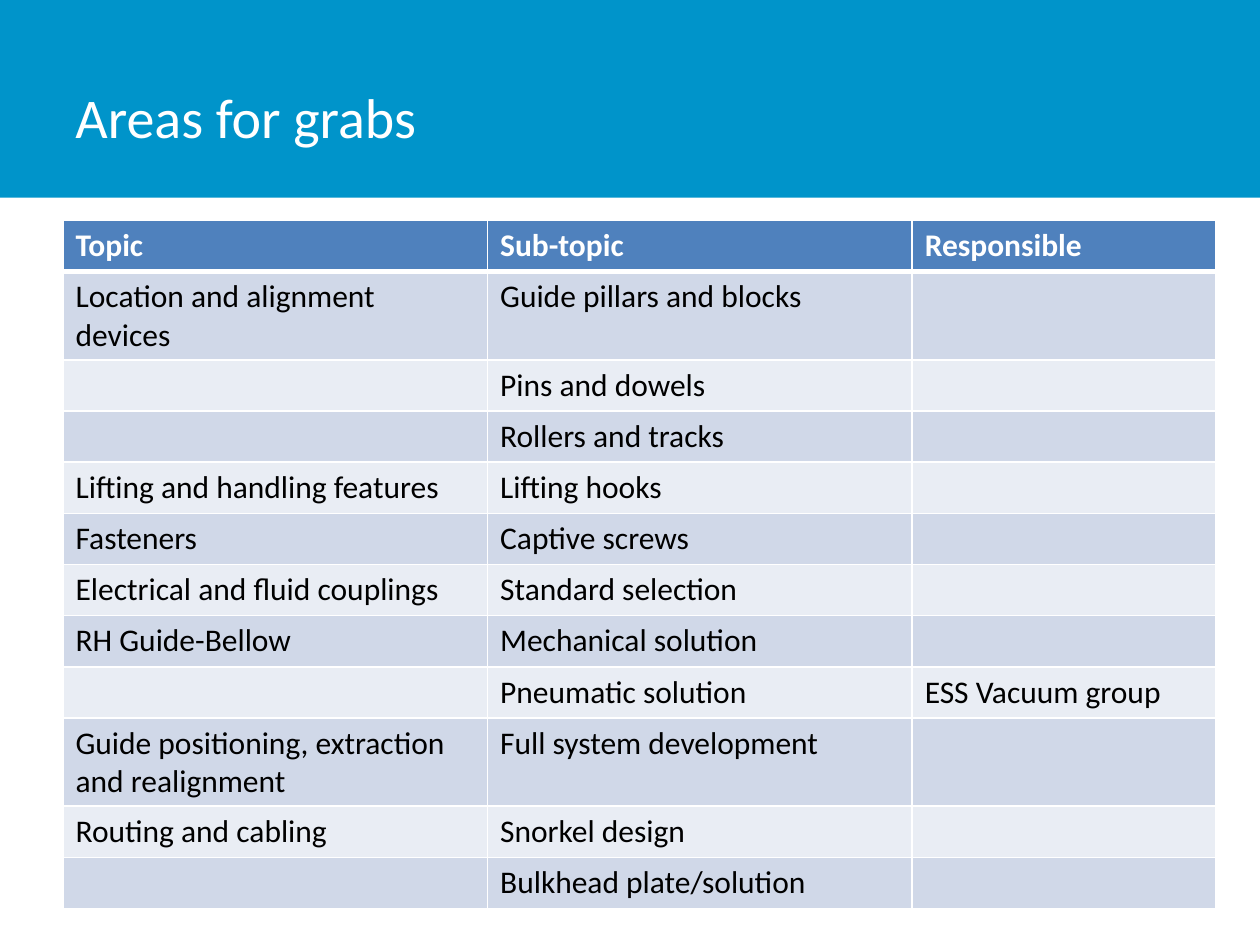
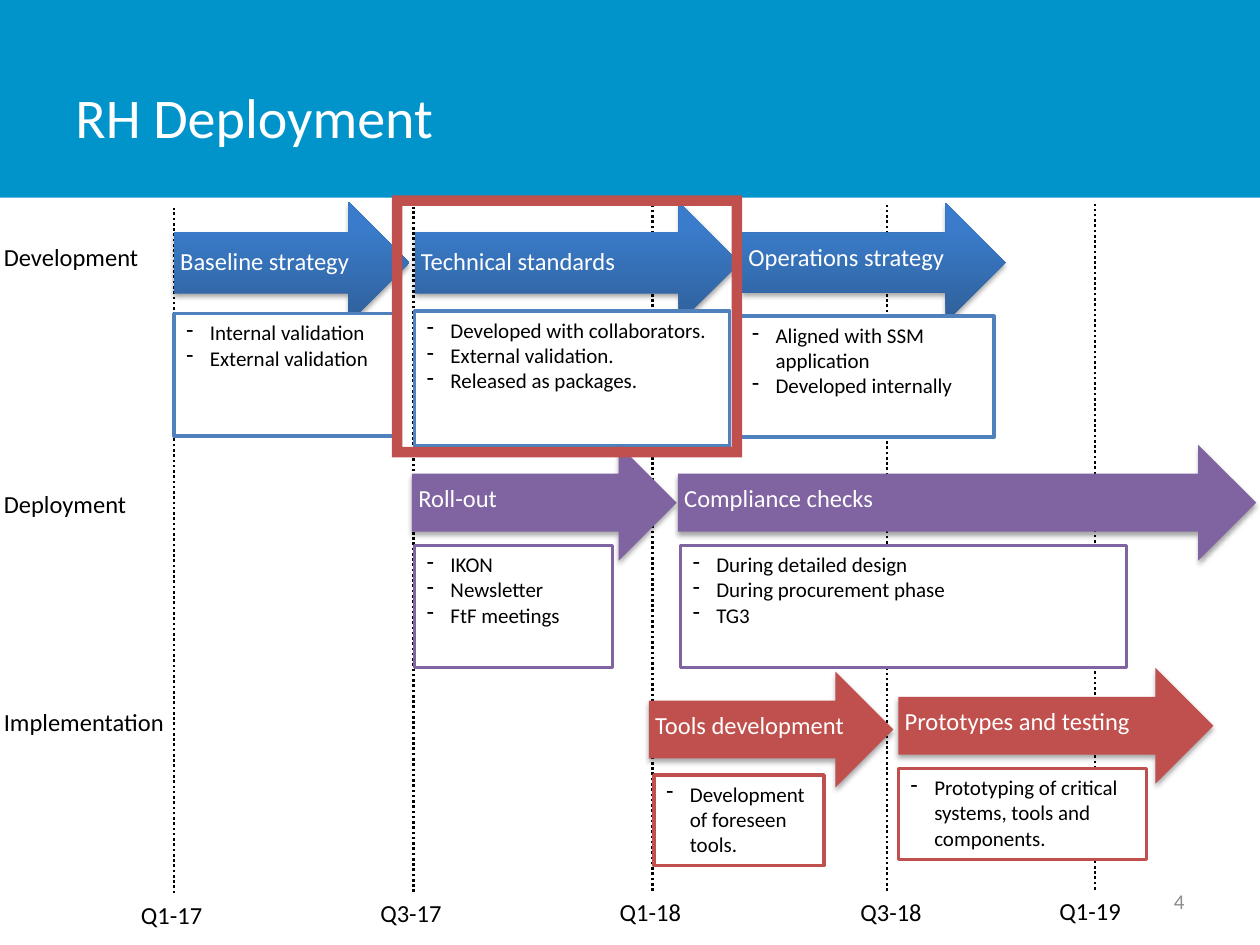
from lxml import etree
from pptx import Presentation
from pptx import util as u
from pptx.dml.color import RGBColor
from pptx.enum import dml, shapes, text
from pptx.oxml.ns import qn

COLORS = {
    "band": "0094CA", "white": "FFFFFF", "black": "000000", "number": "8C8C8C",
    "blue": "4F81BD", "purple": "8064A2", "red": "C0504D",
    "dark_row": "D0D8E8", "light_row": "E9EDF4",
    "gradient_bottom": "2F5F99", "gradient_top": "3A7CCB",
}
FONT = "Calibri"

presentation = Presentation()
presentation.slide_width = u.Inches(10)
presentation.slide_height = u.Inches(7.5)
COLUMN = presentation.slide_width / 100
ROW = presentation.slide_height / 75


def grid(left, top, width, height):
    return [round(n * unit) for n, unit in zip((left, top, width, height), (COLUMN, ROW) * 2)]


def write(frame, lines, size=14, color="black", bold=False, align="LEFT", anchor="TOP",
          bullet=None, spacing=None, margins=(1, 0.5, 1, 0.5)):
    frame.word_wrap = True
    frame.vertical_anchor = text.MSO_ANCHOR[anchor]
    frame.margin_left, frame.margin_top, frame.margin_right, frame.margin_bottom = grid(*margins)
    for index, line in enumerate(lines):
        paragraph = frame.add_paragraph() if index else frame.paragraphs[0]
        paragraph.alignment = text.PP_ALIGN[align]
        if spacing:
            paragraph.line_spacing = spacing
        if bullet:
            properties = paragraph._p.get_or_add_pPr()
            indent = round(1.87 * COLUMN)
            properties.set("marL", str(indent))
            properties.set("indent", str(-indent))
            etree.SubElement(properties, qn("a:buChar")).set("char", bullet)
        run = paragraph.add_run()
        run.text = line
        run.font.name, run.font.size, run.font.bold = FONT, u.Pt(size), bold
        run.font.color.rgb = RGBColor.from_string(COLORS[color])


slides = []
for title in ("Areas for grabs", "RH Deployment"):
    slide = presentation.slides.add_slide(presentation.slide_layouts[6])
    band = slide.shapes.add_shape(shapes.MSO_SHAPE.RECTANGLE, *grid(0, 0, 100, 15.7))
    band.shadow.inherit = False
    band.fill.solid()
    band.fill.fore_color.rgb = RGBColor.from_string(COLORS["band"])
    band.line.fill.background()
    title_box = slide.shapes.add_textbox(*grid(5, 3, 78.1, 12.5))
    write(title_box.text_frame, [title], size=32, color="white", anchor="MIDDLE")
    slides.append(slide)
areas_slide, deployment_slide = slides

areas = [
    ("Topic", "Sub-topic", "Responsible"),
    ("Location and alignment devices", "Guide pillars and blocks", ""),
    ("", "Pins and dowels", ""),
    ("", "Rollers and tracks", ""),
    ("Lifting and handling features", "Lifting hooks", ""),
    ("Fasteners", "Captive screws", ""),
    ("Electrical and fluid couplings", "Standard selection", ""),
    ("RH Guide-Bellow", "Mechanical solution", ""),
    ("", "Pneumatic solution", "ESS Vacuum group"),
    ("Guide positioning, extraction and realignment", "Full system development", ""),
    ("Routing and cabling", "Snorkel design", ""),
    ("", "Bulkhead plate/solution", ""),
]
table = areas_slide.shapes.add_table(
    len(areas), 3, *grid(5, 17.5, 91.5, 4.06 * len(areas))).table
for column, width in zip(table.columns, (33.7, 33.7, 24.1)):
    column.width = round(width * COLUMN)
for row_index, entries in enumerate(areas):
    header = row_index == 0
    fill = "blue" if header else ("light_row", "dark_row")[row_index % 2]
    for column_index, entry in enumerate(entries):
        cell = table.cell(row_index, column_index)
        properties = cell._tc.get_or_add_tcPr()
        for side in "LRTB":
            thick = (row_index, side) in ((0, "B"), (1, "T"))
            border = etree.SubElement(properties, qn("a:ln" + side))
            border.set("w", str(u.Pt(3 if thick else 1)))
            paint = etree.SubElement(border, qn("a:solidFill"))
            etree.SubElement(paint, qn("a:srgbClr")).set("val", COLORS["white"])
        cell.fill.solid()
        cell.fill.fore_color.rgb = RGBColor.from_string(COLORS[fill])
        if entry:
            write(cell.text_frame, [entry], size=18, bold=header,
                  color="white" if header else "black")

quarters = [
    ("Q1-17", 13.8, 10.2, 70.9), ("Q3-17", 32.8, 29.2, 70.8), ("Q1-18", 51.8, 48.2, 70.7),
    ("Q3-18", 70.4, 67.3, 70.7), ("Q1-19", 86.9, 83.1, 70.6),
]
for quarter, x, label_left, bottom in quarters:
    left, top, right, end = grid(x, bottom - 54.4, x, bottom)
    line = deployment_slide.shapes.add_connector(
        shapes.MSO_CONNECTOR.STRAIGHT, left, end, right, top)
    line.line.width = u.Pt(1.5)
    line.line.color.rgb = RGBColor.from_string(COLORS["black"])
    line.line.dash_style = dml.MSO_LINE.ROUND_DOT
    etree.SubElement(line._element.spPr, qn("a:effectLst"))
    label = deployment_slide.shapes.add_textbox(*grid(label_left, bottom, 6.9, 3.4))
    write(label.text_frame, [quarter])

for phase, top in (("Development", 18.7), ("Deployment", 38.3), ("Implementation", 55.6)):
    label = deployment_slide.shapes.add_textbox(*grid(0, top, 14.2, 3.4))
    write(label.text_frame, [phase], margins=(0.3, 0.5, 0, 0.5))

number_box = deployment_slide.shapes.add_textbox(*grid(71.7, 69.5, 23.3, 4))
write(number_box.text_frame, ["4"], size=12, color="number", align="RIGHT", anchor="MIDDLE")

stages = [
    ("Baseline strategy", "blue", (13.8, 16, 18.7, 9.7), (18.6, 17.2), (13.8, 24.9, 17.9, 9.7),
     ["Internal validation", "External validation"]),
    ("Technical standards", "blue", (32.9, 16, 25.8, 9.7), (18.6, 24.8), (32.9, 24.7, 25, 10.7),
     ["Developed with collaborators.", "External validation.", "Released as packages."]),
    ("Operations strategy", "blue", (58.9, 16.1, 20.9, 9.5), (18.3, 27.1), (58.7, 25.1, 20.2, 9.6),
     ["Aligned with SSM application", "Developed internally"]),
    ("Roll-out", "purple", (32.7, 35.3, 21, 9.2), (37.4, 21.9), (32.9, 43.3, 15.7, 9.7),
     ["IKON", "Newsletter", "FtF meetings"]),
    ("Compliance checks", "purple", (53.8, 35.3, 45.9, 9.2), (37.4, 40.1), (54, 43.3, 35.4, 9.7),
     ["During detailed design", "During procurement phase", "TG3"]),
    ("Prototypes and testing", "red", (71.3, 53, 25, 9.2), (55.1, 22), (71.3, 61, 19.7, 7.2),
     ["Prototyping of critical systems, tools and components."]),
    ("Tools development", "red", (51.5, 53.3, 19.4, 9.2), (55.4, 26.1), (51.9, 61.5, 13.5, 7.2),
     ["Development of foreseen tools."]),
]
for name, color, arrow_area, (name_top, name_width), details_area, details in stages:
    arrow = deployment_slide.shapes.add_shape(shapes.MSO_SHAPE.RIGHT_ARROW, *grid(*arrow_area))
    arrow.line.fill.background()
    if color == "blue":
        arrow.fill.gradient()
        arrow.fill.gradient_angle = 90
        gradient = (("gradient_bottom", 0), ("gradient_top", 0.8))
        for stop, (shade, position) in zip(arrow.fill.gradient_stops, gradient):
            stop.color.rgb = RGBColor.from_string(COLORS[shade])
            stop.position = position
    else:
        arrow.fill.solid()
        arrow.fill.fore_color.rgb = RGBColor.from_string(COLORS[color])
    arrow.shadow.inherit = False
    effects = arrow._element.spPr.find(qn("a:effectLst"))
    shadow = etree.SubElement(effects, qn("a:outerShdw"), blurRad=str(u.Pt(3.1)),
                              dist=str(u.Pt(1.8)), dir="5400000", rotWithShape="0")
    shadow_color = etree.SubElement(shadow, qn("a:srgbClr"), val=COLORS["black"])
    etree.SubElement(shadow_color, qn("a:alpha"), val="35000")

    name_box = deployment_slide.shapes.add_textbox(
        *grid(arrow_area[0], name_top, name_width, 5.8))
    write(name_box.text_frame, [name], color="white", anchor="MIDDLE", spacing=0.9,
          margins=(0.5, 0.5, 2.8, 1.8))

    details_box = deployment_slide.shapes.add_shape(
        shapes.MSO_SHAPE.RECTANGLE, *grid(*details_area))
    details_box.shadow.inherit = False
    details_box.fill.solid()
    details_box.fill.fore_color.rgb = RGBColor.from_string(COLORS["white"])
    details_box.line.color.rgb = RGBColor.from_string(COLORS[color])
    details_box.line.width = u.Pt(2)
    write(details_box.text_frame, details, size=12, bullet="-")

highlight = deployment_slide.shapes.add_shape(
    shapes.MSO_SHAPE.FRAME, *grid(31.1, 15.5, 27.8, 20.8))
highlight.adjustments[0] = 0.04
highlight.shadow.inherit = False
highlight.fill.solid()
highlight.fill.fore_color.rgb = RGBColor.from_string(COLORS["red"])
highlight.line.fill.background()

presentation.save("out.pptx")
